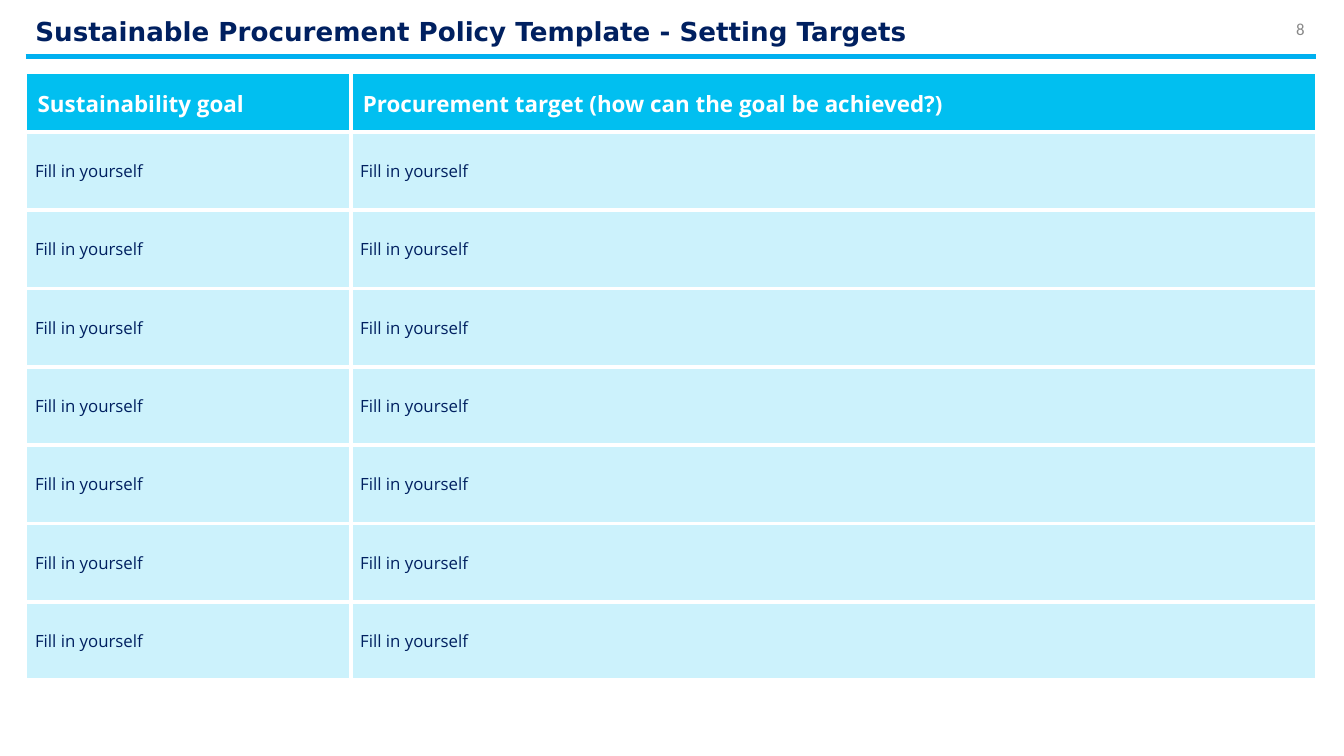
"""Build the slide for setting sustainable procurement targets."""
from dataclasses import dataclass

from lxml.etree import SubElement
from pptx import Presentation
from pptx.dml.color import RGBColor
from pptx.enum.shapes import MSO_CONNECTOR
from pptx.enum.text import MSO_ANCHOR, PP_ALIGN
from pptx.oxml.ns import qn
from pptx.util import Pt

TITLE = "Sustainable Procurement Policy Template - Setting Targets"
PAGE_NUMBER = "8"
HEADERS = ("Sustainability goal", "Procurement target (how can the goal be achieved?)")
GOALS = [("Fill in yourself", "Fill in yourself")] * 7
COLUMN_WIDTHS = (174.2, 517.4)
HEADER_HEIGHT, GOAL_HEIGHT = 31.7, 42
LEFT, WIDTH = 13.7, 691.2
RULE_TOP, TABLE_TOP = 30.3, 38.9


@dataclass(frozen=True)
class TextStyle:
    font: str
    size: float
    color: str
    bold: bool = False


@dataclass(frozen=True)
class Theme:
    title: TextStyle = TextStyle("DejaVu Sans", 14, "002060", True)
    number: TextStyle = TextStyle("Calibri", 9, "888888")
    header: TextStyle = TextStyle("Open Sans", 12, "FFFFFF", True)
    goal: TextStyle = TextStyle("Open Sans", 9, "002060")
    rule: str = "00B0F0"
    header_fill: str = "01BFF0"
    goal_fill: str = "CCF2FC"
    border: str = "FFFFFF"


THEME = Theme()


def write(frame, text, style):
    paragraph = frame.paragraphs[0]
    paragraph.text = text
    font = paragraph.font
    font.name, font.size, font.bold = style.font, Pt(style.size), style.bold
    font.color.rgb = RGBColor.from_string(style.color)
    return paragraph


def set_margins(holder, left, top, right, bottom):
    holder.margin_left, holder.margin_top = Pt(left), Pt(top)
    holder.margin_right, holder.margin_bottom = Pt(right), Pt(bottom)


def add_text(page, text, style, left, top, width, height):
    box = page.shapes.add_textbox(Pt(left), Pt(top), Pt(width), Pt(height))
    frame = box.text_frame
    frame.word_wrap = True
    frame.vertical_anchor = MSO_ANCHOR.MIDDLE
    set_margins(frame, 5.3, 2.7, 5.3, 2.7)
    return write(frame, text, style)


def add_rule(page):
    rule = page.shapes.add_connector(
        MSO_CONNECTOR.STRAIGHT, Pt(LEFT), Pt(RULE_TOP), Pt(LEFT + WIDTH), Pt(RULE_TOP)
    )
    rule.line.color.rgb = RGBColor.from_string(THEME.rule)
    rule.line.width = Pt(3)
    SubElement(rule._element.spPr, qn("a:effectLst"))


def add_borders(cell):
    properties = cell._tc.get_or_add_tcPr()
    for side in ("a:lnL", "a:lnR", "a:lnT", "a:lnB"):
        line = SubElement(properties, qn(side), w=str(Pt(2.25)))
        SubElement(SubElement(line, qn("a:solidFill")), qn("a:srgbClr"), val=THEME.border)


def fill_cell(cell, text, style, color, margins):
    add_borders(cell)
    cell.fill.solid()
    cell.fill.fore_color.rgb = RGBColor.from_string(color)
    cell.vertical_anchor = MSO_ANCHOR.MIDDLE
    set_margins(cell, *margins)
    write(cell.text_frame, text, style)


def add_targets(page):
    rows = [HEADERS, *GOALS]
    height = HEADER_HEIGHT + GOAL_HEIGHT * len(GOALS)
    table = page.shapes.add_table(
        len(rows), len(HEADERS), Pt(LEFT), Pt(TABLE_TOP), Pt(sum(COLUMN_WIDTHS)), Pt(height)
    ).table
    table.horz_banding = False
    for column, width in zip(table.columns, COLUMN_WIDTHS):
        column.width = Pt(width)
    for index, texts in enumerate(rows):
        if index == 0:
            look = THEME.header, THEME.header_fill, (6.5, 8.6, 6.5, 6.5)
        else:
            look = THEME.goal, THEME.goal_fill, (5.1, 2.2, 0, 2.2)
        table.rows[index].height = Pt(GOAL_HEIGHT if index else HEADER_HEIGHT)
        for column, text in enumerate(texts):
            fill_cell(table.cell(index, column), text, *look)


def main():
    deck = Presentation()
    deck.slide_width, deck.slide_height = Pt(720), Pt(405)
    page = deck.slides.add_slide(deck.slide_layouts[6])
    add_rule(page)
    title = add_text(page, TITLE, THEME.title, LEFT, 7, WIDTH, 21.6)
    title.line_spacing = 0.9
    add_targets(page)
    number = add_text(page, PAGE_NUMBER, THEME.number, 671.8, 8.8, 32.4, 13.7)
    number.alignment = PP_ALIGN.RIGHT
    deck.save("out.pptx")


if __name__ == "__main__":
    main()
